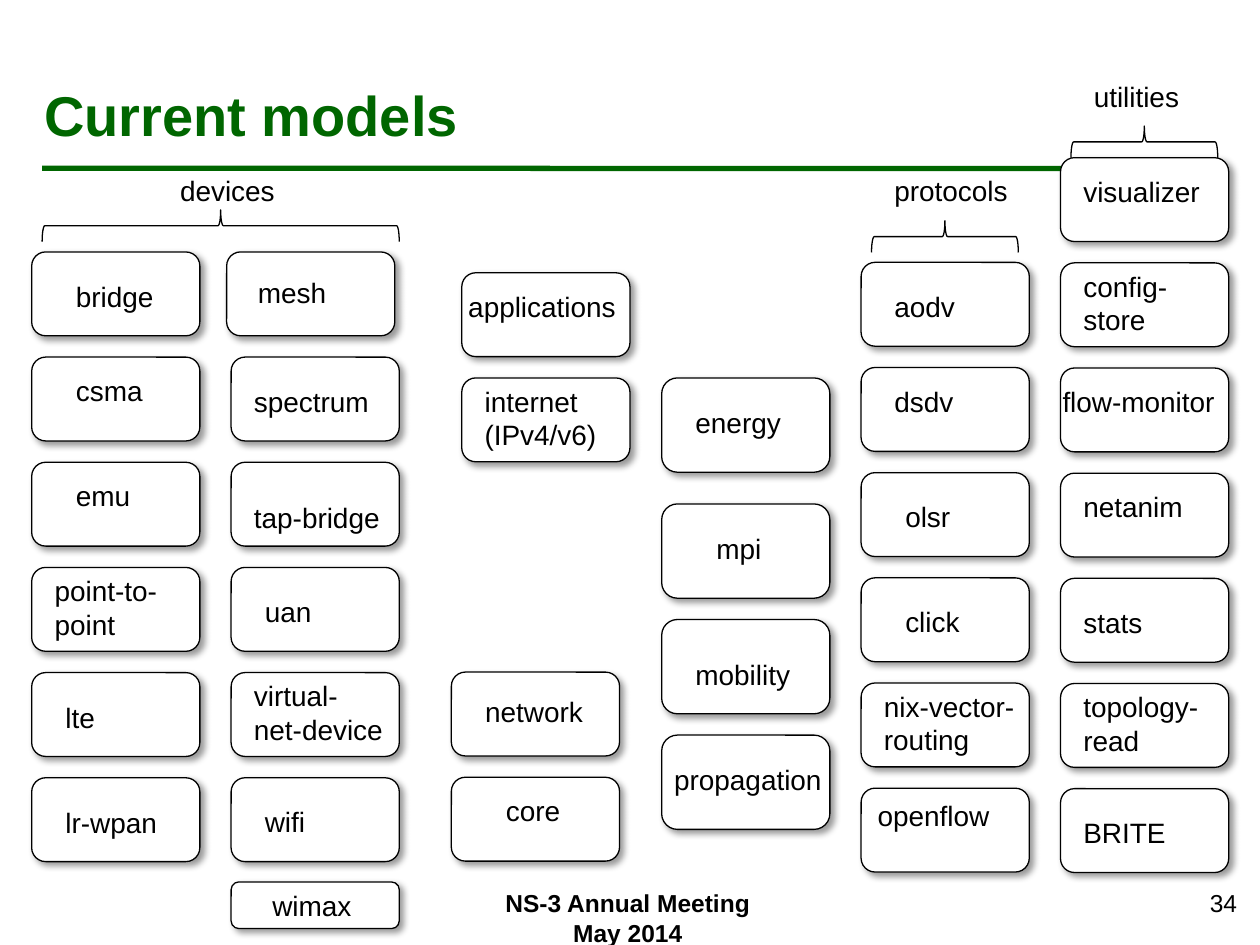
from dataclasses import dataclass

from lxml import etree
from pptx import Presentation
from pptx.dml.color import RGBColor
from pptx.enum.shapes import MSO_CONNECTOR, MSO_SHAPE
from pptx.enum.text import MSO_ANCHOR, PP_ALIGN
from pptx.oxml.ns import qn
from pptx.util import Cm, Pt

BOX = MSO_SHAPE.FLOWCHART_ALTERNATE_PROCESS
BRACE = MSO_SHAPE.RIGHT_BRACE
STRAIGHT = MSO_CONNECTOR.STRAIGHT
TOP, MIDDLE = MSO_ANCHOR.TOP, MSO_ANCHOR.MIDDLE
LEFT, CENTER, RIGHT = PP_ALIGN.LEFT, PP_ALIGN.CENTER, PP_ALIGN.RIGHT


@dataclass(frozen=True)
class Theme:
    """Colours, font, type sizes and line widths of the slide."""
    green: RGBColor = RGBColor(0x00, 0x66, 0x00)
    black: RGBColor = RGBColor(0x00, 0x00, 0x00)
    white: RGBColor = RGBColor(0xFF, 0xFF, 0xFF)
    font: str = "Arial"
    title: Pt = Pt(32)
    label: Pt = Pt(16)
    footer: Pt = Pt(14)
    rule: Pt = Pt(3)
    outline: Pt = Pt(0.75)


THEME = Theme()
BOX_WIDTH = 3.39
BRACE_HEIGHT = 0.64
LINE_HEIGHT = 0.94
COLUMNS = [
    (9.1, 13.55, 2.12, 1.69, [("network", 0.43, 0.33, 2.51),
                              ("core", 0.85, 0.21, 1.75)]),
    (9.31, 5.5, 2.12, 1.69, [("applications", -0.12, 0.21, 3.51),
                             ("internet\n(IPv4/v6)", 0.21, 0, 2.79)]),
    (13.34, 7.62, 0, 1.9, [("energy", 0.43, 0.43, 2.97)]),
    (13.34, 10.16, 2.33, 1.9, [("mpi", 0.85, 0.43, 1.6),
                               ("mobility", 0.43, 0.64, 2.44),
                               ("propagation", 0, 0.43, 3.53)]),
    (17.36, 5.29, 2.12, 1.69, [("aodv", 0.42, 0.42, 1.75),
                               ("dsdv", 0.42, 0.21, 1.73),
                               ("olsr", 0.64, 0.42, 1.42),
                               ("click", 0.64, 0.42, 1.63),
                               ("nix-vector-\nrouting", 0.21, 0, 3.18),
                               ("openflow", None, None, None)]),
    (21.38, 3.18, 2.12, 1.69, [("visualizer", 0.21, 0.21, 2.87),
                               ("config-\nstore", 0.21, 0, 2.24),
                               ("flow-monitor", -0.21, 0.21, 3.61),
                               ("netanim", 0.21, 0.21, 2.54),
                               ("stats", 0.21, 0.42, 1.73),
                               ("topology-\nread", 0.21, 0, 2.84),
                               ("BRITE", 0.21, 0.42, 2.18)]),
    (0.64, 5.08, 2.12, 1.69, [("bridge", 0.64, 0.43, 2.08),
                              ("csma", 0.64, 0.21, 1.88),
                              ("emu", 0.64, 0.21, 1.63),
                              ("point-to-\npoint", 0.21, 0, 2.62),
                              ("lte", 0.43, 0.43, 1.12),
                              ("lr-wpan", 0.43, 0.43, 2.39)]),
    (4.57, 5.08, 0, 1.69, [("mesh", 0.38, 0.36, 1.91)]),
    (4.66, 7.2, 2.12, 1.69, [("spectrum", 0.21, 0.42, 2.87),
                             ("tap-bridge", 0.21, 0.64, 3.07),
                             ("uan", 0.43, 0.42, 1.47),
                             ("virtual-\nnet-device", 0.21, 0, 3.15),
                             ("wifi", 0.43, 0.42, 1.32)]),
    (4.66, 17.78, 0, 0.94, [("wimax", 0.58, 0, 2.13)]),
]
HEADINGS = [
    ("devices", 3.38, 3.38, 2.44, 0.85, 4.23, 7.2),
    ("protocols", 17.78, 3.38, 2.82, 17.57, 4.45, 2.96),
    ("utilities", 21.8, 1.48, 2.26, 21.59, 2.54, 2.96),
]


def write(tf, text, size, color=THEME.black, bold=False, align=LEFT, anchor=TOP):
    """Fill a text frame, one paragraph per line."""
    tf.text = text
    tf.vertical_anchor = anchor
    for p in tf.paragraphs:
        p.alignment = align
        p.font.name = THEME.font
        p.font.size = size
        p.font.bold = bold
        p.font.color.rgb = color


def add_text(s, text, left, top, width, height, size, wrap=True, **style):
    """Add a text box."""
    sp = s.shapes.add_textbox(Cm(left), Cm(top), Cm(width), Cm(height))
    sp.text_frame.word_wrap = wrap
    write(sp.text_frame, text, size, **style)


def add_label(s, text, left, top, width):
    """Add an unwrapped label sized to its lines."""
    height = LINE_HEIGHT + 0.69 * text.count("\n")
    add_text(s, text, left, top, width, height, THEME.label, wrap=False)


def add_outlined(s, kind, left, top, width, height):
    """Add a white shape with a thin black outline."""
    sp = s.shapes.add_shape(kind, Cm(left), Cm(top), Cm(width), Cm(height))
    sp.shadow.inherit = False
    sp.fill.solid()
    sp.fill.fore_color.rgb = THEME.white
    sp.line.color.rgb = THEME.black
    sp.line.width = THEME.outline
    return sp


def add_box(s, left, top, height):
    """Add a rounded model box with a soft drop shadow."""
    sp = add_outlined(s, BOX, left, top, BOX_WIDTH, height)
    effects = sp.element.spPr.find(qn("a:effectLst"))
    shadow = etree.SubElement(effects, qn("a:outerShdw"), blurRad=str(Pt(4)),
                              dist=str(Pt(3)), dir="2700000", rotWithShape="0")
    color = etree.SubElement(shadow, qn("a:srgbClr"), val=str(THEME.black))
    etree.SubElement(color, qn("a:alpha"), val="40000")
    return sp


def add_column(s, left, top, step, height, models):
    """Stack model boxes at equal steps and label them."""
    for i, (name, dx, dy, width) in enumerate(models):
        y = top + i * step
        sp = add_box(s, left, y, height)
        if width is None:
            write(sp.text_frame, name, THEME.label)
        else:
            add_label(s, name, left + dx, y + dy, width)


def add_heading(s, name, left, top, width, brace_left, brace_top, brace_width):
    """Add a group name above an upward brace."""
    x = brace_left + (brace_width - BRACE_HEIGHT) / 2
    y = brace_top - (brace_width - BRACE_HEIGHT) / 2
    sp = add_outlined(s, BRACE, x, y, BRACE_HEIGHT, brace_width)
    sp.rotation = 270
    add_label(s, name, left, top, width)


def add_rule(s):
    """Add the green line under the title."""
    c = s.shapes.add_connector(STRAIGHT, Cm(0.85), Cm(3.39), Cm(24.55), Cm(3.4))
    c.line.color.rgb = THEME.green
    c.line.width = THEME.rule
    etree.SubElement(c.element.spPr, qn("a:effectLst"))


def main():
    """Build the slide and save it."""
    prs = Presentation()
    prs.slide_width, prs.slide_height = Cm(25.4), Cm(19.05)
    s = prs.slides.add_slide(prs.slide_layouts[6])
    add_rule(s)
    add_text(s, "Current models", 0.64, 1.48, 11.23, 1.63, THEME.title,
             color=THEME.green, bold=True, anchor=MIDDLE)
    add_text(s, "NS-3 Annual Meeting\nMay 2014", 8.68, 17.78, 7.95, 1.27,
             THEME.footer, bold=True, align=CENTER)
    add_text(s, "34", 19.35, 17.78, 5.84, 1.27, THEME.footer, align=RIGHT)
    for heading in HEADINGS:
        add_heading(s, *heading)
    for column in COLUMNS:
        add_column(s, *column)
    prs.save("out.pptx")


if __name__ == "__main__":
    main()
